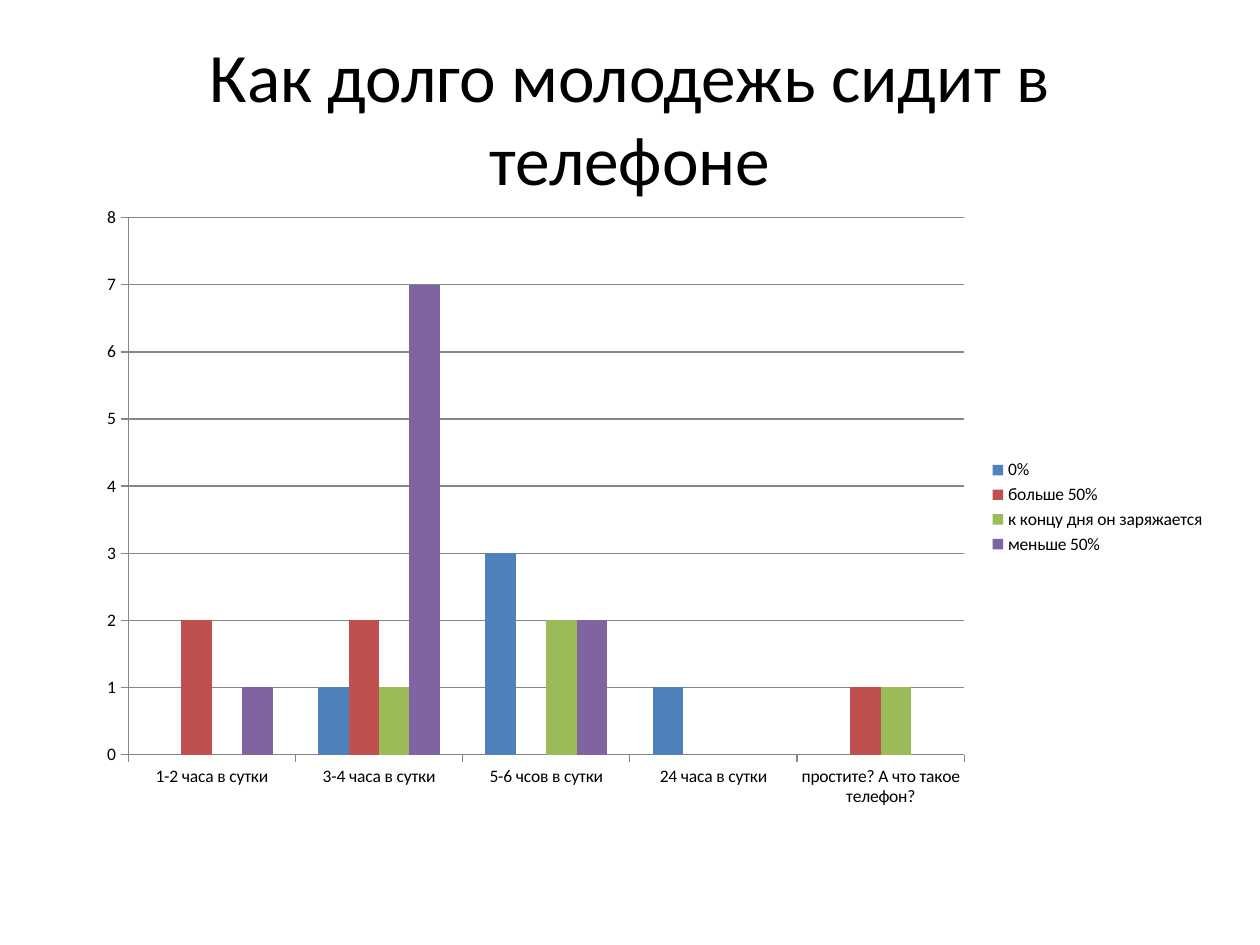
from pptx import Presentation, util as u
from pptx.chart.data import CategoryChartData
from pptx.dml.color import RGBColor
from pptx.enum import chart as ch, text as tx

Pt = u.Pt


def color(code):
    return RGBColor.from_string(code)


class Deck:
    font = "Calibri"
    ink = "000000"
    rule = "868686"

    def __init__(self, wide, high):
        self.prs = Presentation()
        self.prs.slide_width, self.prs.slide_height = Pt(wide), Pt(high)
        self.slide = self.prs.slides.add_slide(self.prs.slide_layouts[6])

    def style(self, font, size):
        font.name, font.size = self.font, Pt(size)
        font.color.rgb = color(self.ink)

    def title(self, words, box, size):
        frame = self.slide.shapes.add_textbox(*map(Pt, box)).text_frame
        frame.word_wrap = True
        frame.vertical_anchor = tx.MSO_ANCHOR.MIDDLE
        frame.text = words
        par = frame.paragraphs[0]
        par.alignment = tx.PP_ALIGN.CENTER
        self.style(par.runs[0].font, size)

    def line(self, form):
        form.line.color.rgb = color(self.rule)
        form.line.width = Pt(0.75)

    def columns(self, cats, rows, box, size):
        data = CategoryChartData()
        data.categories = cats
        for name, vals, _ in rows:
            data.add_series(name, vals)
        kind = ch.XL_CHART_TYPE.COLUMN_CLUSTERED
        chart = self.slide.shapes.add_chart(kind, *map(Pt, box), data).chart
        self.style(chart.font, size)
        chart.has_title = False

        # Bars
        plot = chart.plots[0]
        plot.gap_width, plot.overlap = 150, 0
        plot.vary_by_categories = False
        for bar, (_, _, fill) in zip(plot.series, rows):
            bar.format.fill.solid()
            bar.format.fill.fore_color.rgb = color(fill)
            bar.invert_if_negative = False

        # Axes and grid
        for axis in (chart.category_axis, chart.value_axis):
            axis.major_tick_mark = ch.XL_TICK_MARK.OUTSIDE
            axis.minor_tick_mark = ch.XL_TICK_MARK.NONE
            self.line(axis.format)
        axis = chart.value_axis
        axis.minimum_scale, axis.maximum_scale, axis.major_unit = 0, 8, 1
        axis.has_major_gridlines = True
        self.line(axis.major_gridlines.format)

        # Legend
        chart.has_legend = True
        chart.legend.position = ch.XL_LEGEND_POSITION.RIGHT
        chart.legend.include_in_layout = False


def main():
    deck = Deck(720, 540)

    # Heading
    deck.title("Как долго молодежь сидит в телефоне", (36, 21.6, 648, 90), 39.6)

    # Survey answers: phone hours by battery charge
    cats = ["1-2 часа в сутки", "3-4 часа в сутки", "5-6 чсов в сутки",
            "24 часа в сутки", "простите? А что такое телефон?"]
    rows = [
        ("0%", (0, 1, 3, 1, 0), "4F81BD"),
        ("больше 50%", (2, 2, 0, 0, 1), "C0504D"),
        ("к концу дня он заряжается", (0, 1, 2, 0, 1), "9BBB59"),
        ("меньше 50%", (1, 7, 2, 0, 0), "8064A2"),
    ]
    deck.columns(cats, rows, (48.24, 111.6, 648, 356.4), 10)

    deck.prs.save("out.pptx")


if __name__ == "__main__":
    main()
